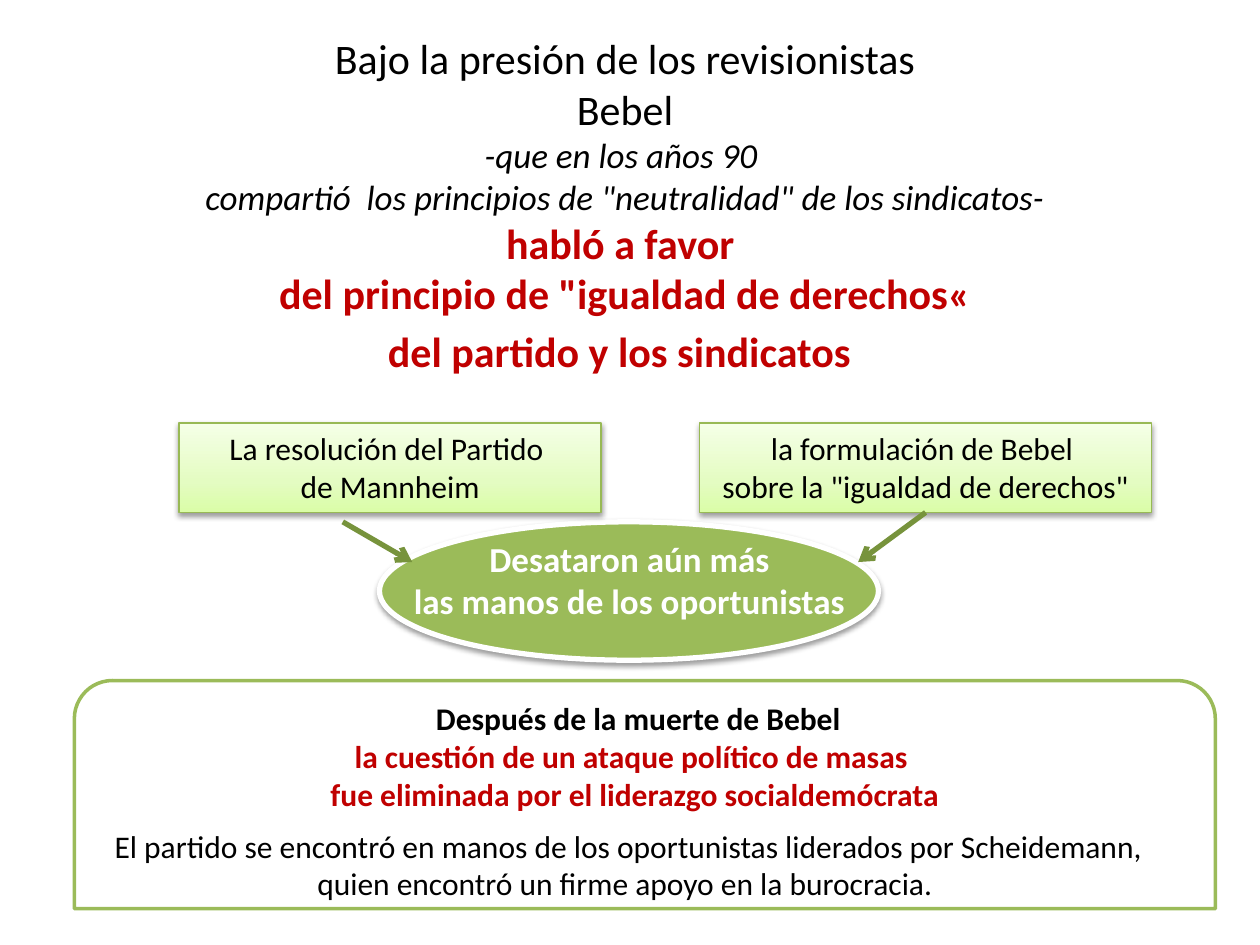
from copy import deepcopy

from lxml import etree
from pptx import Presentation
from pptx import util as u
from pptx.dml.color import RGBColor
from pptx.enum import shapes, text
from pptx.oxml import ns, parse_xml

FONT = "Calibri"
BLACK, WHITE, RED = "000000", "FFFFFF", "C00000"
GREEN, EDGE, ARROW = "9BBB59", "98B955", "77933C"
SHADOW = (
    f'<a:outerShdw {ns.nsdecls("a")} blurRad="40000" dist="20000" dir="5400000" '
    'rotWithShape="0"><a:srgbClr val="000000"><a:alpha val="38000"/></a:srgbClr></a:outerShdw>'
)


def rgb(value):
    """Return the colour for a hex string."""
    return RGBColor.from_string(value)


def add_run(p, content, size=18, color=BLACK, bold=False, italic=False):
    """Add a formatted run to a paragraph."""
    r = p.add_run()
    r.text = content
    f = r.font
    f.name, f.size, f.bold, f.italic = FONT, u.Pt(size), bold, italic
    f.color.rgb = rgb(color)


def write(sp, lines, **fmt):
    """Fill a shape with centred lines, each a text and its own format."""
    tf = sp.text_frame
    tf.word_wrap = True
    tf.auto_size = text.MSO_AUTO_SIZE.NONE
    tf.vertical_anchor = text.MSO_ANCHOR.TOP
    for i, (content, own) in enumerate(lines):
        p = tf.paragraphs[0] if i == 0 else tf.add_paragraph()
        p.alignment = text.PP_ALIGN.CENTER
        add_run(p, content, **{**fmt, **own})


def add_text(s, box, lines, **fmt):
    """Add a text box with centred lines."""
    sp = s.shapes.add_textbox(*map(u.Cm, box))
    write(sp, lines, **fmt)


def add_shape(s, kind, box, fill, line, width, shadow=False):
    """Add a preset shape; a list of stops as fill makes a gradient."""
    sp = s.shapes.add_shape(kind, *map(u.Cm, box))
    sp.shadow.inherit = False
    if shadow:
        sp._element.spPr.find(ns.qn("a:effectLst")).append(parse_xml(SHADOW))
    if isinstance(fill, list):
        set_gradient(sp, fill)
    else:
        sp.fill.solid()
        sp.fill.fore_color.rgb = rgb(fill)
    sp.line.color.rgb = rgb(line)
    sp.line.width = u.Pt(width)
    return sp


def set_gradient(sp, stops):
    """Give a shape a gradient that rises from bottom to top."""
    sp.fill.gradient()
    sp.fill.gradient_angle = 90
    gs_lst = sp._element.spPr.find(".//" + ns.qn("a:gsLst"))
    gs_lst.append(deepcopy(gs_lst[0]))
    for stop, (position, color) in zip(sp.fill.gradient_stops, stops):
        stop.position = position
        stop.color.rgb = rgb(color)


def add_arrow(s, start, end, source=None):
    """Add an open arrow, joined to the bottom of its source if given."""
    cn = s.shapes.add_connector(shapes.MSO_CONNECTOR.STRAIGHT, *map(u.Cm, start + end))
    if source is not None:
        cn.begin_connect(source, 2)
    cn.line.color.rgb = rgb(ARROW)
    cn.line.width = u.Pt(3)
    etree.SubElement(cn.line._get_or_add_ln(), ns.qn("a:tailEnd"), type="arrow")
    etree.SubElement(cn._element.spPr, ns.qn("a:effectLst"))


def heading(s, x, y, w, h):
    """Place the title with its aside and its red claim."""
    sp = s.shapes.title
    sp.left, sp.top, sp.width, sp.height = map(u.Cm, (x, y, w, h))
    aside = dict(size=20, italic=True)
    claim = dict(color=RED, bold=True)
    write(sp, [
        ("Bajo la presión de los revisionistas", {}),
        ("Bebel", {}),
        ("-que en los años 90 ", aside),
        ('compartió \u00a0los principios de "neutralidad" de los sindicatos-', aside),
        ("habló a favor ", claim),
        ('del principio de "igualdad de derechos«', claim),
        ("del partido y los sindicatos", claim),
    ], size=24)
    add_run(sp.text_frame.paragraphs[-1], "\u00a0", size=28, **claim)


def cause(s, x, y, w, h, lines):
    """Place one light green cause box and return it."""
    stops = [(0, "DAFDA7"), (0.35, "E4FCC2"), (1, "F5FFE7")]
    sp = add_shape(s, shapes.MSO_SHAPE.RECTANGLE, (x, y, w, h), stops, EDGE, 0.75, True)
    write(sp, [(line, {}) for line in lines])
    return sp


def effect(s, x, y, w, h):
    """Place the ellipse and its white label."""
    add_shape(s, shapes.MSO_SHAPE.OVAL, (x, y, w, h), GREEN, WHITE, 3, True)
    add_text(s, (x - 0.2, y + 0.2, w + 0.58, 1.96), [
        ("Desataron aún más ", {}),
        ("las manos de los oportunistas\u00a0", {}),
    ], size=20, color=WHITE, bold=True)


def outcome(s, x, y, w, h):
    """Place the closing panel and its two texts."""
    add_shape(s, shapes.MSO_SHAPE.ROUND_2_SAME_RECTANGLE, (x, y, w, h), WHITE, GREEN, 2)
    add_text(s, (x + 0.2, y + 0.25, w - 0.8, 2.57), [
        ("\u00a0Después de la muerte de Bebel", {}),
        ("la cuestión de un ataque político de masas ", dict(color=RED)),
        ("fue eliminada por el\u00a0liderazgo socialdemócrata", dict(color=RED)),
    ], bold=True)
    add_text(s, (x, y + 2.82, w - 0.8, 1.8), [
        ("\u00a0El partido se encontró en manos de los oportunistas liderados por "
         "Scheidemann, quien encontró un firme apoyo en la burocracia.", {}),
    ])


def main():
    """Build and save the slide."""
    prs = Presentation()
    prs.slide_width, prs.slide_height = u.Cm(25.4), u.Cm(19.05)
    s = prs.slides.add_slide(prs.slide_layouts[5])
    heading(s, 1.5, 0.53, 22.2, 7.26)
    outcome(s, 1.5, 13.72, 23, 4.6)
    effect(s, 7.65, 10.52, 10.06, 2.79)
    cause(s, 3.61, 8.53, 8.51, 1.8, ["La resolución del Partido ", "de Mannheim"])
    wording = cause(s, 14.1, 8.53, 9.12, 1.8,
                    ["la formulación de Bebel ", 'sobre la "igualdad de derechos"'])
    add_arrow(s, (18.66, 10.33), (17.3, 11.33), wording)
    add_arrow(s, (6.91, 10.52), (8.31, 11.33))
    prs.save("out.pptx")


if __name__ == "__main__":
    main()
